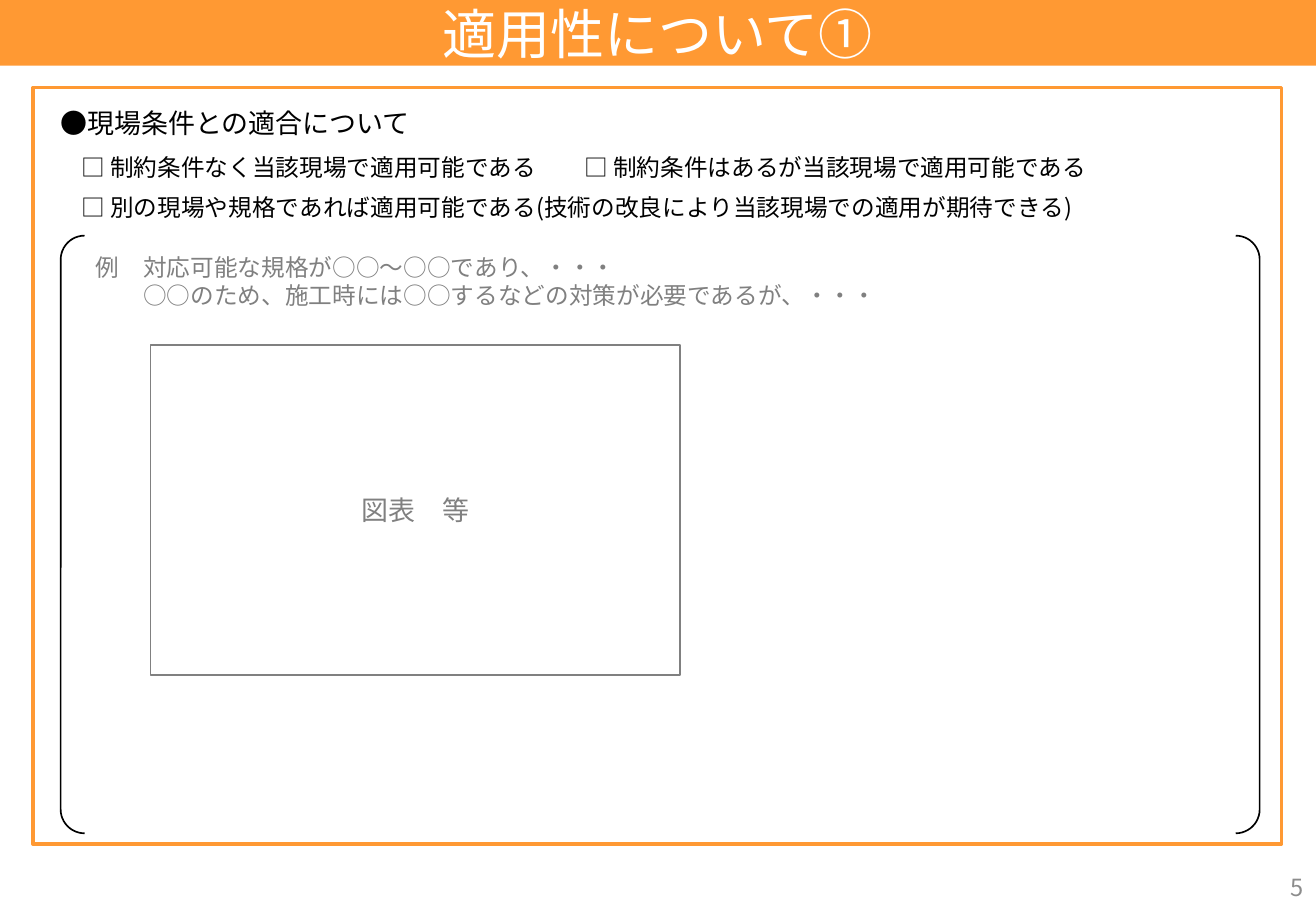
from lxml.etree import SubElement
from pptx import Presentation
from pptx.dml.color import RGBColor
from pptx.enum.lang import MSO_LANGUAGE_ID
from pptx.enum.shapes import MSO_SHAPE
from pptx.enum.text import MSO_ANCHOR, PP_ALIGN
from pptx.oxml.ns import qn
from pptx.util import Pt

THEME = {
    "font": "Noto Sans CJK JP", "latin": "Calibri",
    "orange": "FF9933", "black": "000000", "white": "FFFFFF",
    "grey": "808080", "page": "8C8C8C",
    "title": 32, "heading": 16, "body": 14,
}
WIDTH, HEIGHT = 780, 540
EM = THEME["body"]
OPTION_TAB = 298
LEFT, CENTER, RIGHT = PP_ALIGN.LEFT, PP_ALIGN.CENTER, PP_ALIGN.RIGHT

# name: preset, box, fill, line, line width, adjustment
SHAPES = {
    "banner": (MSO_SHAPE.RECTANGLE, (0, 0, WIDTH, 38.88), "orange", None, 0, None),
    "frame": (MSO_SHAPE.RECTANGLE, (19.44, 51.84, 740.16, 448.56), None, "orange", 2, None),
    "bracket": (MSO_SHAPE.DOUBLE_BRACKET, (36, 139.68, 710.64, 354.24), None, "black", 1, 0.04),
    "figure": (MSO_SHAPE.RECTANGLE, (89.28, 204.48, 313.92, 195.84), None, "grey", 1, None),
}
# box, size, colour, alignment, anchor, inset, lines as (indent, text)
TEXTS = [
    ((260.64, 0, 258.48, 38.88), "title", "white", CENTER, MSO_ANCHOR.MIDDLE, 0,
     [(0, "適用性について①")]),
    ((36, 63.36, 210.24, 19.44), "heading", "black", LEFT, MSO_ANCHOR.TOP, 0,
     [(0, "●現場条件との適合について")]),
    ((48.24, 90.72, 607.68, 17.28), "body", "black", LEFT, MSO_ANCHOR.TOP, 0,
     [(0, "□ 制約条件なく当該現場で適用可能である\t□ 制約条件はあるが当該現場で適用可能である")]),
    ((48.24, 114.48, 600.48, 17.28), "body", "black", LEFT, MSO_ANCHOR.TOP, 0,
     [(0, "□ 別の現場や規格であれば適用可能である(技術の改良により当該現場での適用が期待できる)")]),
    ((56.88, 149.76, 480.96, 33.84), "body", "grey", LEFT, MSO_ANCHOR.TOP, 0,
     [(0, "例　対応可能な規格が○○～○○であり、・・・"),
      (2 * EM, "○○のため、施工時には○○するなどの対策が必要であるが、・・・")]),
    ((604.8, 511.2, 175.2, 28.8), "body", "page", RIGHT, MSO_ANCHOR.MIDDLE, 7.2,
     [(0, "5")]),
]
FIGURE_LABEL = [(0, "図表　等")]


def color(name):
    return RGBColor.from_string(THEME[name])


def write(tf, lines, size, ink, align, anchor, inset, latin="font"):
    frame = {"word_wrap": True, "vertical_anchor": anchor,
             "margin_left": Pt(inset), "margin_right": Pt(inset),
             "margin_top": Pt(inset / 2), "margin_bottom": Pt(inset / 2)}
    for key, value in frame.items():
        setattr(tf, key, value)
    font = {"name": THEME[latin], "size": Pt(THEME[size]),
            "language_id": MSO_LANGUAGE_ID.JAPANESE}
    for i, (indent, text) in enumerate(lines):
        p = tf.add_paragraph() if i else tf.paragraphs[0]
        p.alignment = align
        pPr = p._p.get_or_add_pPr()
        if indent:
            pPr.set("marL", str(Pt(indent)))
        if "\t" in text:
            tabs = SubElement(pPr, qn("a:tabLst"))
            SubElement(tabs, qn("a:tab"), pos=str(Pt(OPTION_TAB)), algn="l")
        r = p.add_run()
        r.text = text
        for key, value in font.items():
            setattr(r.font, key, value)
        r.font.color.rgb = color(ink)
        SubElement(r._r.get_or_add_rPr(), qn("a:ea"), typeface=THEME["font"])


def add_outline(s, preset, box, fill, line, width, adjustment):
    sp = s.shapes.add_shape(preset, *map(Pt, box))
    sp.shadow.inherit = False
    if fill:
        sp.fill.solid()
        sp.fill.fore_color.rgb = color(fill)
    else:
        sp.fill.background()
    if line:
        sp.line.color.rgb = color(line)
        sp.line.width = Pt(width)
    else:
        sp.line.fill.background()
    if adjustment is not None:
        sp.adjustments[0] = adjustment
    return sp


def main():
    prs = Presentation()
    prs.slide_width, prs.slide_height = Pt(WIDTH), Pt(HEIGHT)
    s = prs.slides.add_slide(prs.slide_layouts[6])
    drawn = {name: add_outline(s, *spec_row) for name, spec_row in SHAPES.items()}
    write(drawn["figure"].text_frame, FIGURE_LABEL, "heading", "grey",
          CENTER, MSO_ANCHOR.MIDDLE, 7.2, "latin")
    for box, size, ink, align, anchor, inset, lines in TEXTS:
        tf = s.shapes.add_textbox(*map(Pt, box)).text_frame
        write(tf, lines, size, ink, align, anchor, inset)
    prs.save("out.pptx")


if __name__ == "__main__":
    main()
